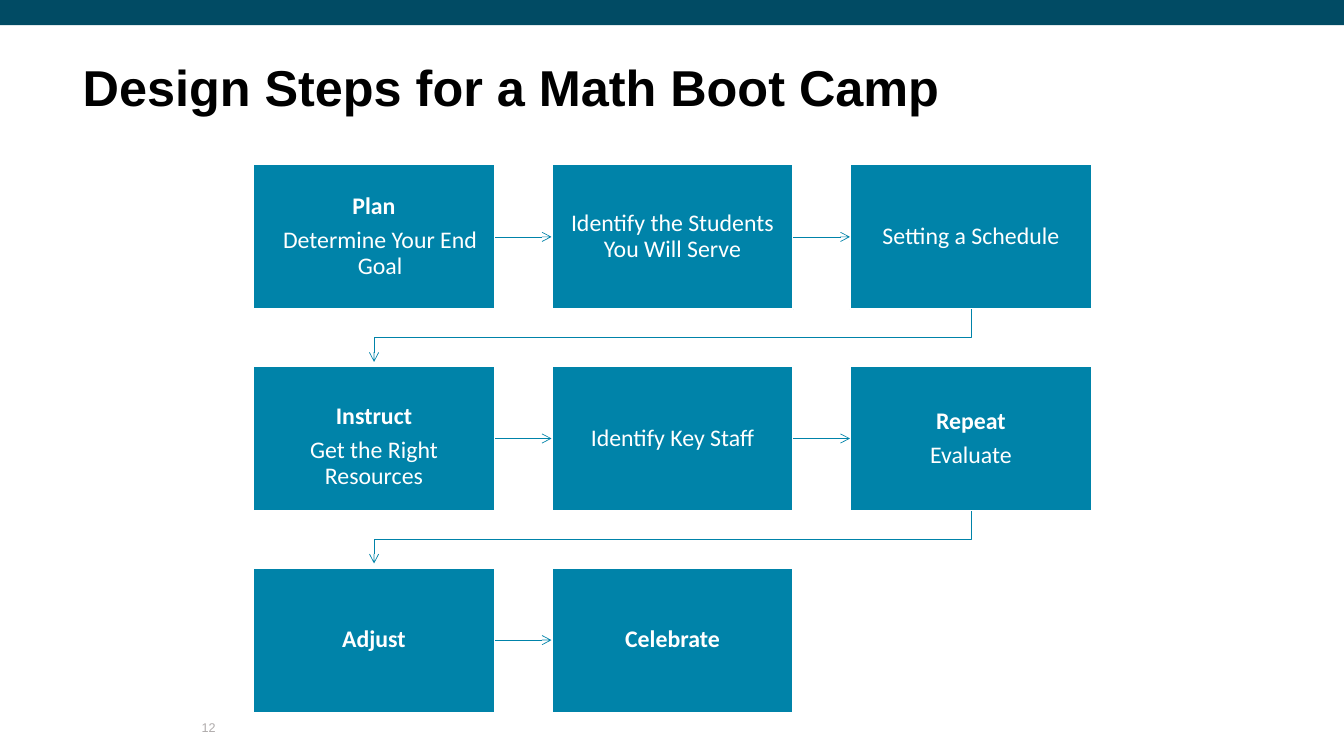
"""Build the slide with the design steps for a math boot camp."""
from lxml import etree
from pptx import Presentation
from pptx import util as u
from pptx.dml.color import RGBColor
from pptx.enum import shapes, text
from pptx.oxml.ns import qn

COLORS = {"band": "014B64", "step": "0083A9", "white": "FFFFFF",
          "title": "000000", "number": "AFABAB"}
BOX_WIDTH, BOX_HEIGHT = 2.4, 1.44
GRID_LEFT, GRID_TOP = 2.51, 1.63
COLUMN_PITCH, ROW_PITCH = 2.96, 2.0
COLUMNS = 3
ARROW_GAP = 0.04
STEPS = [
    {"heading": "Plan", "detail": "Determine Your End Goal", "indent": 0.12},
    {"detail": "Identify the Students You Will Serve"},
    {"detail": "Setting a Schedule"},
    {"heading": "Instruct", "detail": "Get the Right Resources", "drop": 0.16},
    {"detail": "Identify Key Staff"},
    {"heading": "Repeat", "detail": "Evaluate"},
    {"heading": "Adjust"},
    {"heading": "Celebrate"},
]


def rgb(name):
    return RGBColor.from_string(COLORS[name])


def write_text(para, words, *, size, color, font="Calibri", bold=False,
               align=text.PP_ALIGN.LEFT, spacing=None, after=0, indent=0):
    if indent:
        para._p.get_or_add_pPr().set("marL", str(u.Inches(indent)))
    para.alignment = align
    para.line_spacing = spacing
    para.space_after = u.Pt(after)
    span = para.add_run()
    span.text = words
    span.font.name = font
    span.font.size = u.Pt(size)
    span.font.bold = bold
    span.font.color.rgb = rgb(color)


def set_frame(frame, anchor, inset=0, drop=0):
    frame.word_wrap = True
    frame.vertical_anchor = anchor
    frame.margin_left = frame.margin_right = frame.margin_bottom = u.Inches(inset)
    frame.margin_top = u.Inches(inset + drop)


def add_label(page, words, left, top, width, height, anchor, **style):
    box = page.shapes.add_textbox(*map(u.Inches, (left, top, width, height)))
    set_frame(box.text_frame, anchor)
    write_text(box.text_frame.paragraphs[0], words, font="Arial", **style)


def add_rectangle(page, left, top, width, height, fill):
    box = page.shapes.add_shape(shapes.MSO_SHAPE.RECTANGLE,
                                *map(u.Inches, (left, top, width, height)))
    box.shadow.inherit = False
    box.fill.solid()
    box.fill.fore_color.rgb = rgb(fill)
    box.line.fill.background()
    return box


def add_step(page, index, heading=None, detail=None, indent=0, drop=0):
    row, column = divmod(index, COLUMNS)
    box = add_rectangle(page, GRID_LEFT + column * COLUMN_PITCH,
                        GRID_TOP + row * ROW_PITCH, BOX_WIDTH, BOX_HEIGHT, "step")
    box.line.color.rgb = rgb("white")
    box.line.width = u.Pt(1.5)
    frame = box.text_frame
    set_frame(frame, text.MSO_ANCHOR.MIDDLE, 0.12, drop)
    style = {"size": 17, "color": "white", "align": text.PP_ALIGN.CENTER, "spacing": 0.9}
    para = frame.paragraphs[0]
    if heading:
        write_text(para, heading, bold=True, after=6 if detail else 0, **style)
    if detail:
        para = frame.add_paragraph() if heading else para
        write_text(para, detail, indent=indent, **style)
    return box


def style_arrow(arrow):
    arrow.line.color.rgb = rgb("step")
    arrow.line.width = u.Pt(0.5)
    etree.SubElement(arrow.line._get_or_add_ln(), qn("a:tailEnd"), type="arrow")


def add_straight_arrow(page, start, end):
    arrow = page.shapes.add_connector(shapes.MSO_CONNECTOR.STRAIGHT, 0, 0, 0, 0)
    arrow.begin_connect(start, 3)
    arrow.end_connect(end, 1)
    style_arrow(arrow)
    etree.SubElement(arrow._element.spPr, qn("a:effectLst"))


def add_return_arrow(page, start, end):
    start_x = start.left + start.width // 2
    start_y = start.top + start.height
    end_x = end.left + end.width // 2
    middle_y = (start_y + end.top) // 2
    builder = page.shapes.build_freeform(start_x, start_y)
    builder.add_line_segments([(start_x, middle_y), (end_x, middle_y),
                               (end_x, end.top - u.Inches(ARROW_GAP))], close=False)
    arrow = builder.convert_to_shape()
    arrow.shadow.inherit = False
    arrow.fill.background()
    style_arrow(arrow)


def main():
    deck = Presentation()
    deck.slide_width, deck.slide_height = u.Inches(13.33), u.Inches(7.5)
    page = deck.slides.add_slide(deck.slide_layouts[6])
    add_rectangle(page, 0, 0, 13.33, 0.25, "band")
    add_label(page, "Design Steps for a Math Boot Camp", 0.82, 0.63, 9.31, 1.27,
              text.MSO_ANCHOR.TOP, size=36, color="title", bold=True, spacing=0.9)
    add_label(page, "12", 2, 7.05, 2.25, 0.24, text.MSO_ANCHOR.BOTTOM,
              size=9, color="number")
    boxes = [add_step(page, index, **step) for index, step in enumerate(STEPS)]
    for index, (start, end) in enumerate(zip(boxes, boxes[1:]), 1):
        add_arrow = add_straight_arrow if index % COLUMNS else add_return_arrow
        add_arrow(page, start, end)
    deck.save("out.pptx")


if __name__ == "__main__":
    main()
